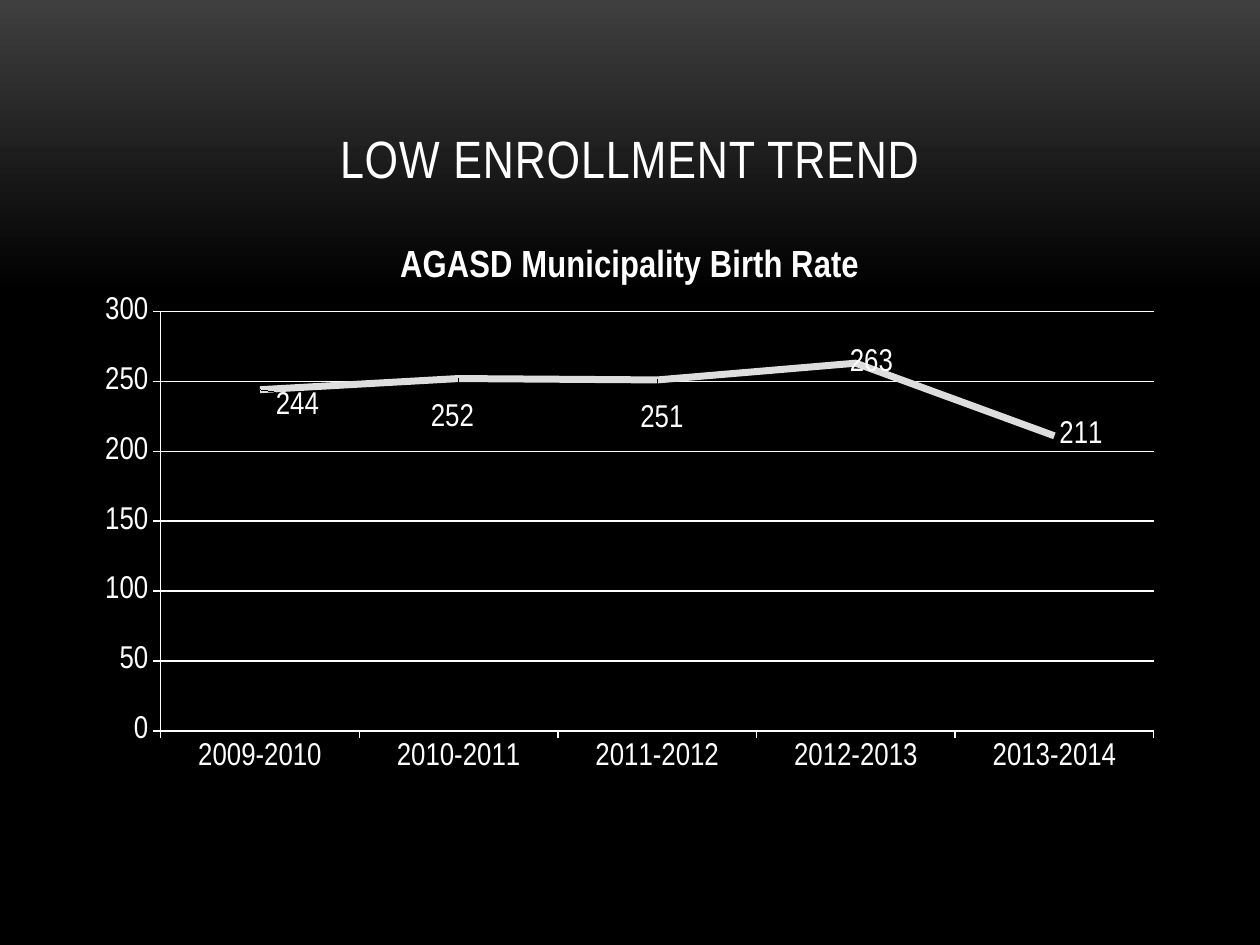
from dataclasses import dataclass

from lxml import etree
from pptx import Presentation
from pptx import util as u
from pptx.chart import data
from pptx.dml import color
from pptx.enum import chart as ch, text
from pptx.oxml import ns


@dataclass(frozen=True)
class Theme:
    font: str = "Arial Narrow"
    white: color.RGBColor = color.RGBColor.from_string("FFFFFF")
    trend: color.RGBColor = color.RGBColor.from_string("DDDDDD")
    glow: color.RGBColor = color.RGBColor.from_string("3F3F3F")
    black: color.RGBColor = color.RGBColor.from_string("000000")
    heading: u.Pt = u.Pt(30)
    caption: u.Pt = u.Pt(21.6)
    body: u.Pt = u.Pt(18)
    hairline: u.Pt = u.Pt(0.75)
    stroke: u.Pt = u.Pt(4)


theme = Theme()


def style(font, size, bold=False):
    font.name, font.size, font.bold = theme.font, size, bold
    font.color.rgb = theme.white


def place(parent, index, **settings):
    layout = parent.find(ns.qn("c:layout"))
    if layout is None:
        layout = etree.Element(ns.qn("c:layout"))
        parent.insert(index, layout)
    manual = etree.SubElement(layout, ns.qn("c:manualLayout"))
    for tag, value in settings.items():
        etree.SubElement(manual, ns.qn(f"c:{tag}"), val=str(value))


deck = Presentation()
deck.slide_width, deck.slide_height = u.Cm(25.4), u.Cm(19.05)
slide = deck.slides.add_slide(deck.slide_layouts[6])

backdrop = slide.background.fill
backdrop.gradient()
backdrop.gradient_angle = 270
for stop, shade, position in zip(backdrop.gradient_stops, (theme.glow, theme.black), (0, 0.31)):
    stop.color.rgb = shade
    stop.position = position

left, width = u.Cm(1.7), u.Cm(22)
heading = slide.shapes.add_textbox(left, u.Cm(0.76), width, u.Cm(3.18)).text_frame
heading.word_wrap = True
heading.vertical_anchor = text.MSO_ANCHOR.BOTTOM
headline = heading.paragraphs[0]
headline.alignment = text.PP_ALIGN.CENTER
words = headline.add_run()
words.text = "LOW ENROLLMENT TREND"
style(headline.font, theme.heading)
words.font._element.set("spc", "50")

births = data.CategoryChartData()
births.categories = [f"{year}-{year + 1}" for year in range(2009, 2014)]
births.add_series("Series 1", (244, 252, 251, 263, 211))
chart = slide.shapes.add_chart(
    ch.XL_CHART_TYPE.LINE, left, u.Cm(4.45), width, u.Cm(11.43), births
).chart
style(chart.font, theme.body)
chart.has_legend = False
chart.has_title = True
caption = chart.chart_title.text_frame
caption.text = "AGASD Municipality Birth Rate"
style(caption.paragraphs[0].font, theme.caption, bold=True)
chart.chart_title.include_in_layout = False

years, counts = chart.category_axis, chart.value_axis
counts.minimum_scale, counts.maximum_scale, counts.major_unit = 0, 300, 50
counts.has_major_gridlines = True
for axis in (years, counts):
    axis.major_tick_mark = ch.XL_TICK_MARK.OUTSIDE
    axis.minor_tick_mark = ch.XL_TICK_MARK.NONE
for line in (years.format.line, counts.format.line, counts.major_gridlines.format.line):
    line.color.rgb = theme.white
    line.width = theme.hairline

plot = chart.plots[0]
plot.vary_by_categories = False
trend = plot.series[0]
trend.smooth = False
trend.marker.style = ch.XL_MARKER_STYLE.NONE
trend.format.line.color.rgb = theme.trend
trend.format.line.width = theme.stroke

labels = trend.data_labels
labels.show_value = True
labels.position = ch.XL_LABEL_POSITION.RIGHT
style(labels.font, theme.body)
shifts = ((0.01, 0.03), (-0.03, 0.07), (-0.02, 0.07), (-0.01, 0))
for index in range(len(shifts)):
    trend.points[index].data_label.position = ch.XL_LABEL_POSITION.RIGHT
for label, (across, down) in zip(trend._element.iter(ns.qn("c:dLbl")), shifts):
    place(label, 1, x=across, y=down)

place(
    chart._chartSpace.chart.plotArea, 0,
    layoutTarget="inner", xMode="edge", yMode="edge", x=0.07, y=0.16, w=0.91, h=0.74,
)

deck.save("out.pptx")
